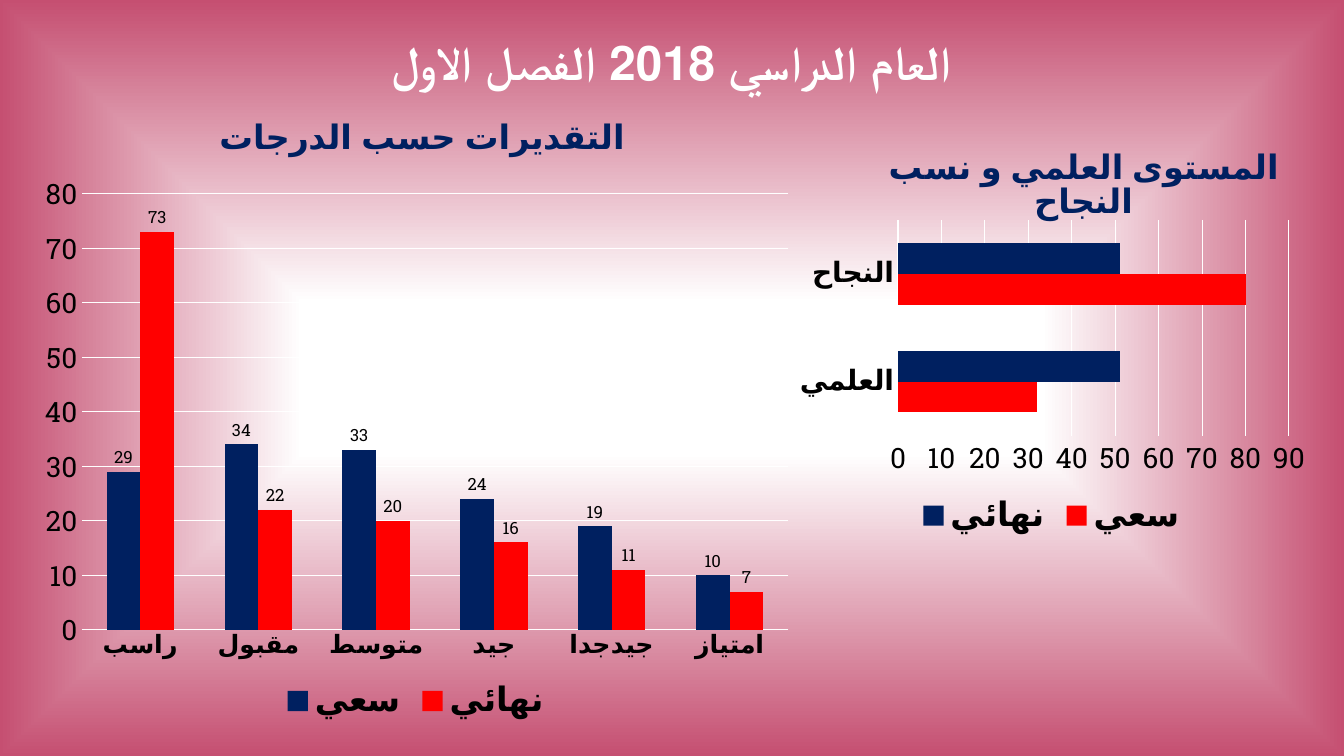
from dataclasses import dataclass

from pptx import Presentation
from pptx.chart.data import CategoryChartData
from pptx.dml.color import RGBColor
from pptx.enum.chart import XL_CHART_TYPE as Kind
from pptx.enum.chart import XL_LABEL_POSITION as LabelPos
from pptx.enum.chart import XL_LEGEND_POSITION as LegendPos
from pptx.enum.chart import XL_TICK_MARK as Tick
from pptx.enum.text import MSO_ANCHOR, PP_ALIGN
from pptx.oxml import parse_xml
from pptx.oxml.ns import nsdecls
from pptx.util import Pt

HEADING = "العام الدراسي 2018 الفصل الاول"
HEADING_BOX = (65.5, 16.5, 828, 60.5)

# Boxes are left, top, width, height in points;
# plot and title places are fractions of the chart.
GRADES = dict(
    kind=Kind.COLUMN_CLUSTERED,
    title="التقديرات حسب الدرجات",
    box=(19.4, 66.2, 555, 451.4),
    plot=(0.07, 0.16, 0.91, 0.69),
    title_at=(0.24, 0.03),
    categories=["راسب", "مقبول", "متوسط", "جيد", "جيدجدا", "امتياز"],
    series=[
        ("سعي", [29, 34, 33, 24, 19, 10], "navy"),
        ("نهائي", [73, 22, 20, 16, 11, 7], "red"),
    ],
    top_value=80,
    category_size=18,
    labels=True,
)
SUCCESS = dict(
    kind=Kind.BAR_CLUSTERED,
    title="المستوى العلمي و نسب النجاح",
    box=(562.3, 77, 377.3, 308.2),
    plot=(0.21, 0.26, 0.74, 0.5),
    title_at=(0.18, 0.08),
    categories=["العلمي", "النجاح"],
    series=[("سعي", [32, 80], "red"), ("نهائي", [51, 51], "navy")],
    top_value=90,
    category_size=20,
    labels=False,
)


@dataclass(frozen=True)
class Theme:
    font: str = "Roboto Slab"
    white: str = "FFFFFF"
    black: str = "000000"
    navy: str = "002060"
    red: str = "FF0000"
    rose: str = "C54F71"
    heading: int = 34
    chart_title: int = 24
    legend: int = 24
    axis: int = 20
    label: int = 12


THEME = Theme()


def style(font, size, color, bold=False):
    font.name = THEME.font
    font.size = Pt(size)
    font.bold = bold
    font.color.rgb = RGBColor.from_string(color)


def white_line(line, width):
    line.color.rgb = RGBColor.from_string(THEME.white)
    line.width = Pt(width)


def set_background(slide):
    """White centre fading to rose at the slide's edges."""
    stops = [(0, THEME.white), (20, THEME.white), (100, THEME.rose)]
    stop_xml = "".join(
        f'<a:gs pos="{percent * 1000}"><a:srgbClr val="{color}"/></a:gs>'
        for percent, color in stops
    )
    slide.element.cSld.insert(0, parse_xml(
        f'<p:bg {nsdecls("p", "a")}><p:bgPr><a:gradFill rotWithShape="1">'
        f'<a:gsLst>{stop_xml}</a:gsLst><a:path path="shape">'
        '<a:fillToRect l="50000" t="50000" r="50000" b="50000"/></a:path>'
        '</a:gradFill><a:effectLst/></p:bgPr></p:bg>'
    ))


def place(element, position, after, inner=False):
    """Give a chart part a fixed place; its layout follows the tag `after`."""
    for old in element.findall("{*}layout"):
        element.remove(old)
    target = '<c:layoutTarget val="inner"/>' if inner else ""
    modes = '<c:xMode val="edge"/><c:yMode val="edge"/>'
    values = "".join(
        f'<c:{name} val="{value}"/>' for name, value in zip("xywh", position)
    )
    layout = parse_xml(
        f'<c:layout {nsdecls("c")}><c:manualLayout>{target}{modes}{values}'
        '</c:manualLayout></c:layout>'
    )
    previous = element.find("{*}" + after) if after else None
    element.insert(0 if previous is None else element.index(previous) + 1, layout)


def add_heading(slide):
    frame = slide.shapes.add_textbox(*map(Pt, HEADING_BOX)).text_frame
    frame.word_wrap = True
    frame.vertical_anchor = MSO_ANCHOR.MIDDLE
    heading = frame.paragraphs[0]
    heading.text = HEADING
    heading.alignment = PP_ALIGN.CENTER
    heading.line_spacing = 0.9
    heading._p.get_or_add_pPr().set("rtl", "1")
    style(heading.font, THEME.heading, THEME.white, True)


def add_results_chart(slide, content):
    data = CategoryChartData()
    data.categories = content["categories"]
    for name, values, _ in content["series"]:
        data.add_series(name, values)
    chart = slide.shapes.add_chart(
        content["kind"], *map(Pt, content["box"]), data
    ).chart
    style(chart.font, 10, THEME.white)

    chart.has_title = True
    title = chart.chart_title
    title.include_in_layout = False
    title.text_frame.text = content["title"]
    style(title.text_frame.paragraphs[0].font,
          THEME.chart_title, THEME.navy, True)
    place(title._element, content["title_at"], "tx")
    place(chart._chartSpace.chart.plotArea, content["plot"], None, inner=True)

    chart.has_legend = True
    chart.legend.position = LegendPos.BOTTOM
    chart.legend.include_in_layout = False
    style(chart.legend.font, THEME.legend, THEME.black, True)

    categories, values = chart.category_axis, chart.value_axis
    for axis in (categories, values):
        axis.major_tick_mark = axis.minor_tick_mark = Tick.NONE
    style(categories.tick_labels.font, content["category_size"],
          THEME.black, True)
    white_line(categories.format.line, 1)
    style(values.tick_labels.font, THEME.axis, THEME.black)
    values.minimum_scale, values.maximum_scale = 0, content["top_value"]
    values.major_unit = 10
    values.format.line.fill.background()
    white_line(values.major_gridlines.format.line, 0.75)

    plot = chart.plots[0]
    plot.gap_width, plot.overlap = 150, 0
    plot.vary_by_categories = False
    for series, (_, _, color) in zip(plot.series, content["series"]):
        series.format.fill.solid()
        series.format.fill.fore_color.rgb = RGBColor.from_string(
            getattr(THEME, color))
        series.invert_if_negative = False
        if content["labels"]:
            labels = series.data_labels
            labels.show_value = True
            labels.position = LabelPos.OUTSIDE_END
            style(labels.font, THEME.label, THEME.black)


def main():
    deck = Presentation()
    deck.slide_width, deck.slide_height = Pt(960), Pt(540)
    slide = deck.slides.add_slide(deck.slide_layouts[6])
    set_background(slide)
    add_heading(slide)
    for content in (GRADES, SUCCESS):
        add_results_chart(slide, content)
    deck.save("out.pptx")


if __name__ == "__main__":
    main()
